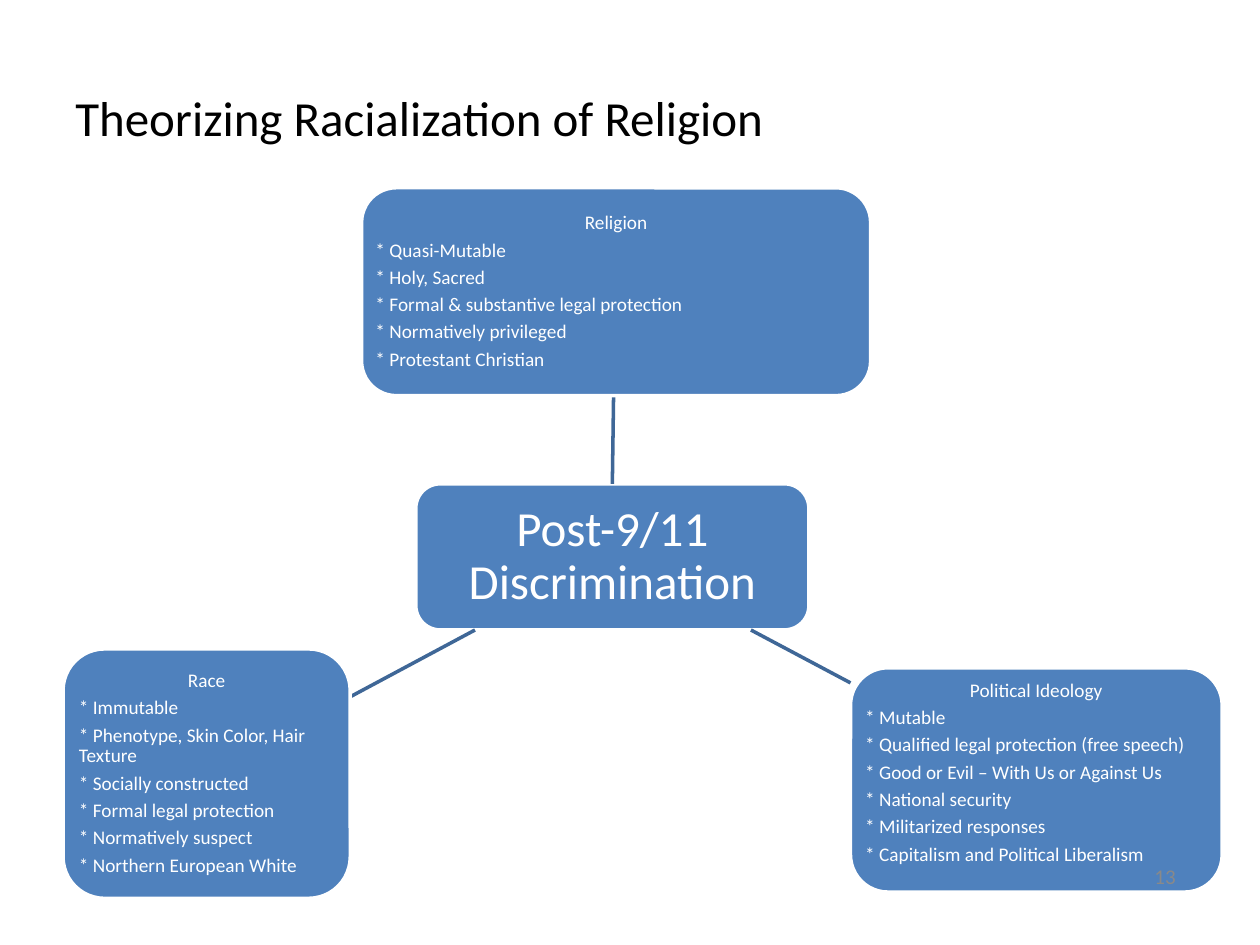
from lxml.etree import SubElement
from pptx import Presentation
from pptx.dml.color import RGBColor
from pptx.enum.shapes import MSO_CONNECTOR, MSO_SHAPE
from pptx.enum.text import MSO_ANCHOR, PP_ALIGN
from pptx.oxml.ns import qn
from pptx.util import Inches, Pt

COLORS = {"box": "4F81BD", "link": "3F6797", "white": "FFFFFF",
          "title": "000000", "number": "898989"}
FONT = "Calibri"
TITLE = ("Theorizing Racialization of Religion", (0.5, 0.3, 9, 1.25))
NUMBER = ("13", (7.1, 6.75, 2.33, 0.4))
HUB = ("Post-9/11 Discrimination", (3.3, 3.84, 3.12, 1.16))

# heading, box, bottom inset, points
TOPICS = [
    ("Religion", (2.87, 1.49, 4.04, 1.65), 0.03, [
        "Quasi-Mutable", "Holy, Sacred",
        "Formal & substantive legal protection",
        "Normatively privileged", "Protestant Christian"]),
    ("Political Ideology", (6.75, 5.3, 2.95, 1.78), 0.14, [
        "Mutable", "Qualified legal protection (free speech)",
        "Good or Evil – With Us or Against Us", "National security",
        "Militarized responses", "Capitalism and Political Liberalism"]),
    ("Race", (0.5, 5.15, 2.28, 1.98), 0.03, [
        "Immutable", "Phenotype, Skin Color, Hair Texture",
        "Socially constructed", "Formal legal protection",
        "Normatively suspect", "Northern European White"]),
]
LINKS = [(4.86, 3.84, 4.87, 3.14), (5.96, 5, 6.75, 5.42), (3.77, 5, 2.78, 5.53)]


def rgb(name):
    return RGBColor.from_string(COLORS[name])


def write(sp, lines, size, color, insets=(0.1, 0.05, 0.1, 0.05), **spacing):
    """Fill a shape with (text, alignment) lines."""
    tf = sp.text_frame
    tf.word_wrap = True
    tf.vertical_anchor = MSO_ANCHOR.MIDDLE
    for side, inset in zip(("left", "top", "right", "bottom"), insets):
        setattr(tf, f"margin_{side}", Inches(inset))
    for i, (text, align) in enumerate(lines):
        p = tf.add_paragraph() if i else tf.paragraphs[0]
        for key, value in {"alignment": align, **spacing}.items():
            setattr(p, key, value)
        r = p.add_run()
        r.text = text
        r.font.name, r.font.size = FONT, Pt(size)
        r.font.color.rgb = rgb(color)


def add_box(s, place):
    sp = s.shapes.add_shape(MSO_SHAPE.ROUNDED_RECTANGLE, *map(Inches, place))
    sp.shadow.inherit = False
    sp.fill.solid()
    sp.fill.fore_color.rgb = rgb("box")
    sp.line.color.rgb = rgb("white")
    sp.line.width = Pt(2)
    return sp


def add_link(s, ends):
    line = s.shapes.add_connector(MSO_CONNECTOR.STRAIGHT, *map(Inches, ends))
    line.line.color.rgb = rgb("link")
    line.line.width = Pt(2)
    SubElement(line._element.spPr, qn("a:effectLst"))


def add_label(s, label, size, color, align):
    text, place = label
    write(s.shapes.add_textbox(*map(Inches, place)), [(text, align)], size, color)


def main():
    prs = Presentation()
    prs.slide_width, prs.slide_height = Inches(10), Inches(7.5)
    s = prs.slides.add_slide(prs.slide_layouts[6])

    add_label(s, TITLE, 28, "title", PP_ALIGN.LEFT)
    text, place = HUB
    write(add_box(s, place), [(text, PP_ALIGN.CENTER)], 28, "white",
          (0.08,) * 4, line_spacing=0.9)
    for (heading, place, bottom, points), ends in zip(TOPICS, LINKS):
        add_link(s, ends)
        lines = [(heading, PP_ALIGN.CENTER)]
        lines += [(f"* {point}", PP_ALIGN.LEFT) for point in points]
        write(add_box(s, place), lines, 11, "white", (0.03, 0.03, 0.03, bottom),
              line_spacing=0.9, space_after=Pt(3.7))
    add_label(s, NUMBER, 12, "number", PP_ALIGN.RIGHT)

    prs.save("out.pptx")


if __name__ == "__main__":
    main()
